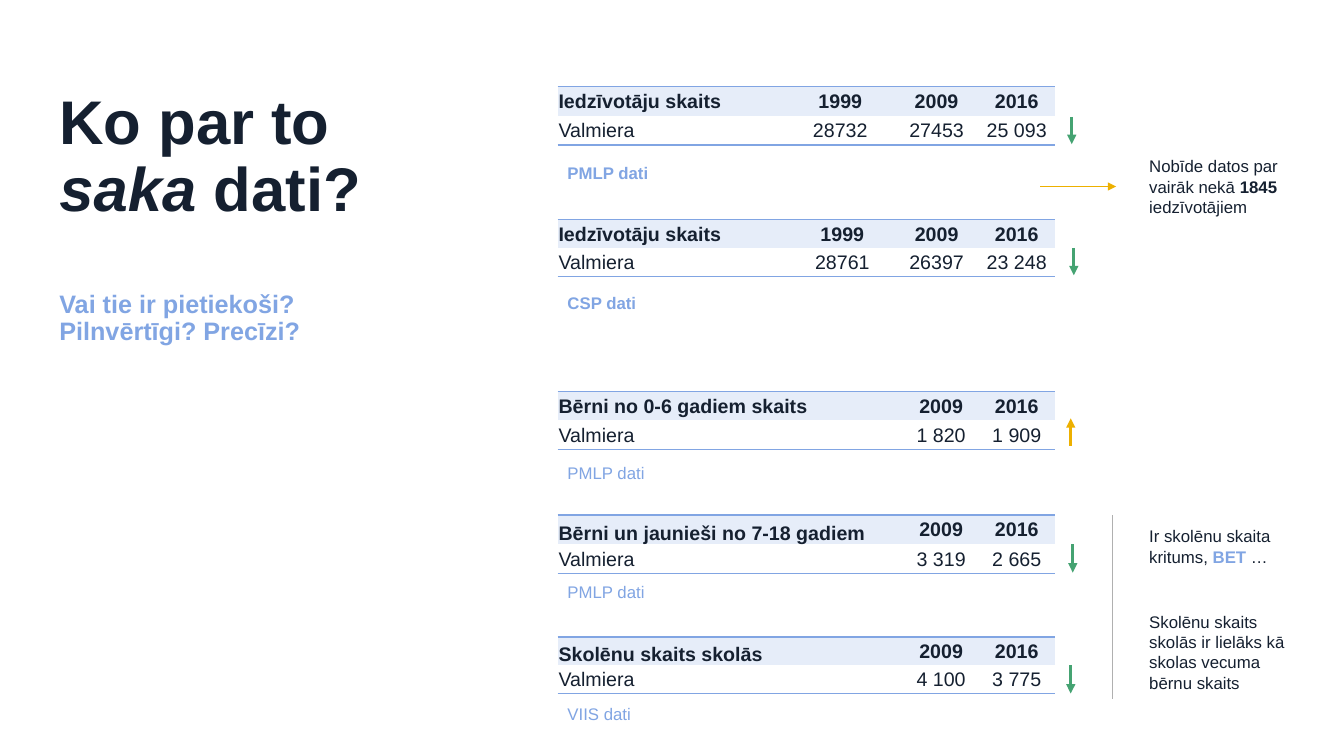
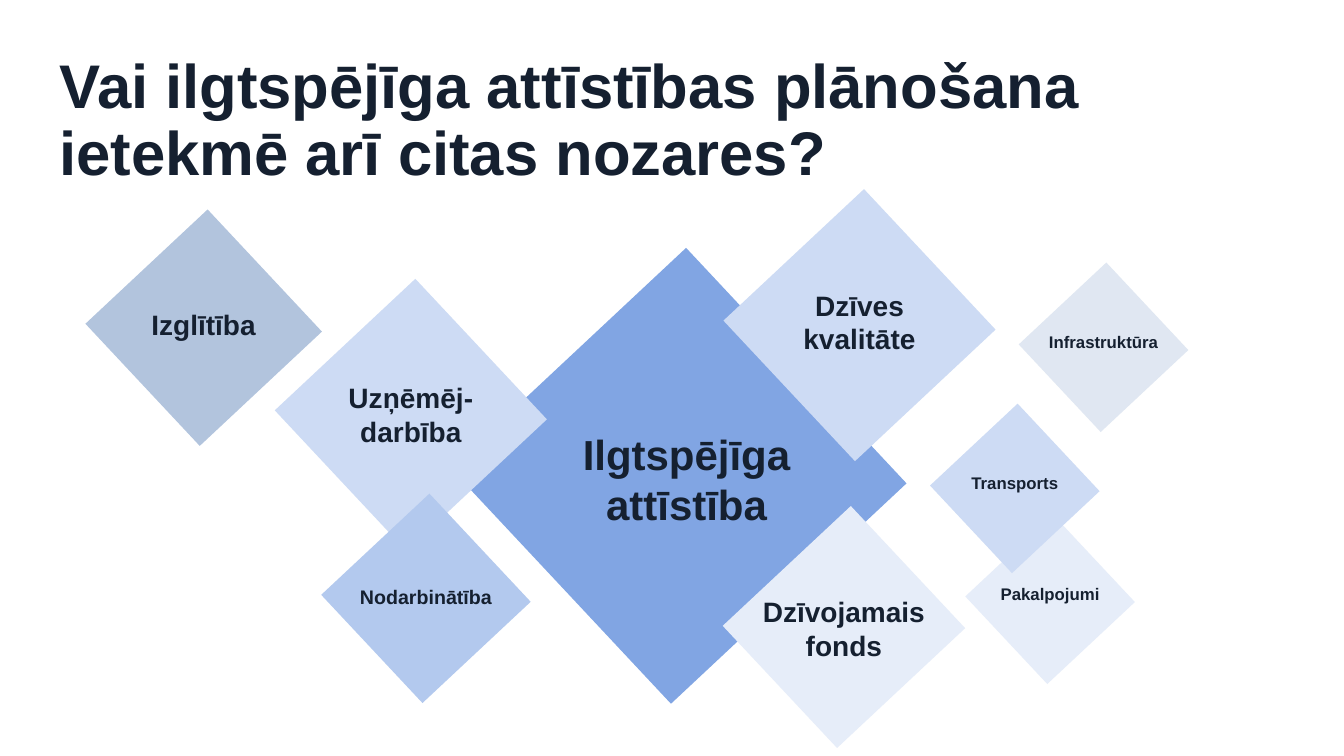
from dataclasses import dataclass

from lxml.etree import SubElement
from pptx import Presentation
from pptx.dml.color import RGBColor
from pptx.enum.shapes import MSO_CONNECTOR as Connector, MSO_SHAPE as Shape
from pptx.enum.text import MSO_ANCHOR as Anchor, PP_ALIGN as Align
from pptx.oxml import parse_xml
from pptx.oxml.ns import nsdecls, qn
from pptx.util import Inches, Pt

# Shared style
FONT = "Arial"
INK, BLUE, PALE, LIGHT = "152030", "81A5E3", "E6EDF9", "CDDBF4"
GREEN, YELLOW, GREY = "45A372", "EDB000", "B0B0B0"
MARGIN = 0.49
TABLE_LEFT, NOTE_LEFT = 5.53, 11.3
DIAMOND_TURN = 226.9
PLAIN_TABLE = "{2D5ABB26-0587-4C30-8999-92F81FD0307C}"


@dataclass
class DataTable:
    top: float
    row_height: float
    columns: list
    rows: list
    source: str
    source_top: float
    arrow_x: float
    arrow_from: float
    arrow_to: float
    arrow_color: str = GREEN
    source_bold: bool = False
    label_anchor: Anchor = Anchor.MIDDLE


@dataclass
class Diamond:
    left: float
    top: float
    width: float
    height: float
    fill: str
    lines: list
    label_top: float
    size: int
    label_width: float = 2.08
    label_shift: float = 0


TABLES = [
    DataTable(0.86, 0.29, [2.27, 1.07, 0.84, 0.75],
              [["Iedzīvotāju skaits", "1999", "2009", "2016"],
               ["Valmiera", "28732", "27453", "25 093"]],
              "PMLP dati", 1.57, 10.63, 1.16, 1.43, source_bold=True),
    DataTable(2.18, 0.28, [2.31, 1.03, 0.84, 0.75],
              [["Iedzīvotāju skaits", "1999", "2009", "2016"],
               ["Valmiera", "28761", "26397", "23 248"]],
              "CSP dati", 2.86, 10.65, 2.46, 2.73, source_bold=True),
    DataTable(3.88, 0.29, [2.69, 0.74, 0.75, 0.75],
              [["Bērni no 0-6 gadiem skaits", "", "2009", "2016"],
               ["Valmiera", "", "1 820", "1 909"]],
              "PMLP dati", 4.54, 10.62, 4.42, 4.15, arrow_color=YELLOW),
    DataTable(5.11, 0.29, [3.33, 0.1, 0.75, 0.75],
              [["Bērni un jaunieši no 7-18 gadiem", "", "2009", "2016"],
               ["Valmiera", "", "3 319", "2 665"]],
              "PMLP dati", 5.72, 10.64, 5.4, 5.68, label_anchor=Anchor.BOTTOM),
    DataTable(6.32, 0.28, [2.69, 0.74, 0.75, 0.75],
              [["Skolēnu skaits skolās", "", "2009", "2016"],
               ["Valmiera", "", "4 100", "3 775"]],
              "VIIS dati", 6.93, 10.62, 6.6, 6.88, label_anchor=Anchor.BOTTOM),
]

# From back to front
DIAMONDS = [
    Diamond(9.82, 5.35, 1.19, 1.19, PALE, ["Pakalpojumi"], 5.74, 12),
    Diamond(5.13, 3.12, 3.2, 3.2, BLUE, ["Ilgtspējīga attīstība"], 4.2, 30,
            label_width=2.57, label_shift=0.08),
    Diamond(7.54, 5.35, 1.66, 1.74, PALE, ["Dzīvojamais fonds"], 5.85, 20),
    Diamond(3.12, 3.16, 1.91, 1.91, LIGHT, ["Uzņēmēj-", "darbība"], 3.73, 20),
    Diamond(7.57, 2.27, 1.91, 1.91, LIGHT, ["Dzīves kvalitāte"], 2.81, 20,
            label_width=1.6),
    Diamond(9.47, 4.25, 1.19, 1.19, LIGHT, ["Transports"], 4.64, 12),
    Diamond(3.49, 5.2, 1.47, 1.47, "B3C9EE", ["Nodarbinātība"], 5.75, 14),
    Diamond(1.19, 2.42, 1.66, 1.66, "B2C4DD", ["Izglītība"], 3, 20),
    Diamond(10.35, 2.85, 1.19, 1.19, "E0E7F2", ["Infrastruktūra"], 3.24, 12),
]


def rgb(color):
    return RGBColor.from_string(color)


def write_text(frame, paragraphs, size=12, color=INK, bold=False,
               align=Align.LEFT, spacing=None):
    """Fill a frame; a paragraph is a string or a list of (text, format) runs."""
    for index, content in enumerate(paragraphs):
        paragraph = frame.add_paragraph() if index else frame.paragraphs[0]
        paragraph.alignment = align
        if spacing:
            paragraph.line_spacing = spacing
        runs = [(content, {})] if isinstance(content, str) else content
        for text, changes in runs:
            run = paragraph.add_run()
            run.text = text
            run.font.name = FONT
            run.font.size = Pt(size)
            run.font.bold = changes.get("bold", bold)
            run.font.italic = changes.get("italic", False)
            run.font.color.rgb = rgb(changes.get("color", color))


def add_text(slide, box, paragraphs, anchor=Anchor.TOP, **text_format):
    frame = slide.shapes.add_textbox(*map(Inches, box)).text_frame
    frame.word_wrap = True
    frame.vertical_anchor = anchor
    write_text(frame, paragraphs, **text_format)


def add_title(slide, box, paragraph, anchor=Anchor.TOP):
    add_text(slide, box, [paragraph], anchor=anchor, size=44, bold=True, spacing=0.9)


def add_line(slide, start, end, color, width, arrow=False):
    points = map(Inches, (*start, *end))
    connector = slide.shapes.add_connector(Connector.STRAIGHT, *points)
    connector.line.color.rgb = rgb(color)
    connector.line.width = Pt(width)
    if arrow:
        SubElement(connector.line._get_or_add_ln(), qn("a:tailEnd"), type="triangle")
    SubElement(connector._element.spPr, qn("a:effectLst"))


def add_cell_border(cell, side):
    border = parse_xml(
        f'<a:{side} {nsdecls("a")} w="12700"><a:solidFill>'
        f'<a:srgbClr val="{BLUE}"/></a:solidFill></a:{side}>')
    cell._tc.get_or_add_tcPr().insert(0, border)


def fill_cell(cell, text, is_header, is_label, label_anchor):
    cell.margin_left = cell.margin_right = cell.margin_top = Inches(0.01)
    cell.margin_bottom = 0
    cell.vertical_anchor = label_anchor if is_header and is_label else Anchor.MIDDLE
    if is_header:
        cell.fill.solid()
        cell.fill.fore_color.rgb = rgb(PALE)
    else:
        cell.fill.background()
    add_cell_border(cell, "lnT" if is_header else "lnB")
    if text:
        write_text(cell.text_frame, [text], size=14, bold=is_header,
                   align=Align.LEFT if is_label else Align.CENTER)
    else:
        # An empty cell must not stretch its row
        paragraph = cell.text_frame.paragraphs[0]
        SubElement(paragraph._p, qn("a:endParaRPr"), sz="1400")


def add_data_table(slide, data):
    """Draw the table, its source and the arrow that shows the trend."""
    box = (TABLE_LEFT, data.top, sum(data.columns), data.row_height * len(data.rows))
    table = slide.shapes.add_table(
        len(data.rows), len(data.columns), *map(Inches, box)).table
    table.first_row = table.horz_banding = False
    table._tbl.tblPr.find(qn("a:tableStyleId")).text = PLAIN_TABLE
    for column, width in zip(table.columns, data.columns):
        column.width = Inches(width)
    for row_index, values in enumerate(data.rows):
        table.rows[row_index].height = Inches(data.row_height)
        for column_index, text in enumerate(values):
            fill_cell(table.cell(row_index, column_index), text,
                      row_index == 0, column_index == 0, data.label_anchor)

    add_text(slide, (TABLE_LEFT, data.source_top, 1.26, 0.3), [data.source],
             color=BLUE, bold=data.source_bold)
    add_line(slide, (data.arrow_x, data.arrow_from), (data.arrow_x, data.arrow_to),
             data.arrow_color, 2.25, arrow=True)


def add_diamond(slide, diamond):
    box = (diamond.left, diamond.top, diamond.width, diamond.height)
    shape = slide.shapes.add_shape(Shape.RECTANGLE, *map(Inches, box))
    shape.rotation = DIAMOND_TURN
    shape.shadow.inherit = False
    shape.fill.solid()
    shape.fill.fore_color.rgb = rgb(diamond.fill)
    shape.line.fill.background()

    # The upright label is centred on the turned square
    center = diamond.left + diamond.width / 2 + diamond.label_shift
    label_left = center - diamond.label_width / 2
    add_text(slide, (label_left, diamond.label_top, diamond.label_width, 0.3),
             diamond.lines, size=diamond.size, bold=True, align=Align.CENTER)


def build_data_slide(slide):
    add_title(slide, (MARGIN, 0.86, 3.62, 1.4),
              [("Ko par to ", {}), ("saka ", {"italic": True}), ("dati?", {})])
    add_text(slide, (MARGIN, 2.84, 2.91, 1.72),
             ["Vai tie ir pietiekoši? Pilnvērtīgi? Precīzi?"],
             size=18, color=BLUE, bold=True, spacing=0.9)
    for data in TABLES:
        add_data_table(slide, data)

    # Remarks on the right
    add_line(slide, (10.32, 1.85), (11.07, 1.85), YELLOW, 0.5, arrow=True)
    add_line(slide, (11.03, 5.11), (11.03, 6.93), GREY, 0.5)
    add_text(slide, (NOTE_LEFT, 1.5, 1.5, 0.71),
             [[("Nobīde datos par vairāk nekā ", {}), ("1845", {"bold": True}),
               (" iedzīvotājiem", {})]])
    add_text(slide, (NOTE_LEFT, 5.17, 1.5, 0.5),
             [[("Ir skolēnu skaita kritums, ", {}),
               ("BET ", {"bold": True, "color": BLUE}), ("…", {})]])
    add_text(slide, (NOTE_LEFT, 6.02, 1.63, 0.91),
             ["Skolēnu skaits skolās ir lielāks kā skolas vecuma bērnu skaits"])


def build_sectors_slide(slide):
    add_title(slide, (MARGIN, 0.4, 11.93, 1.62),
              "Vai ilgtspējīga attīstības plānošana ietekmē arī citas nozares?",
              anchor=Anchor.MIDDLE)
    for diamond in DIAMONDS:
        add_diamond(slide, diamond)


def main():
    presentation = Presentation()
    presentation.slide_width = Inches(13.33)
    presentation.slide_height = Inches(7.5)
    blank = presentation.slide_layouts[6]
    for build in (build_data_slide, build_sectors_slide):
        build(presentation.slides.add_slide(blank))
    presentation.save("out.pptx")


if __name__ == "__main__":
    main()
